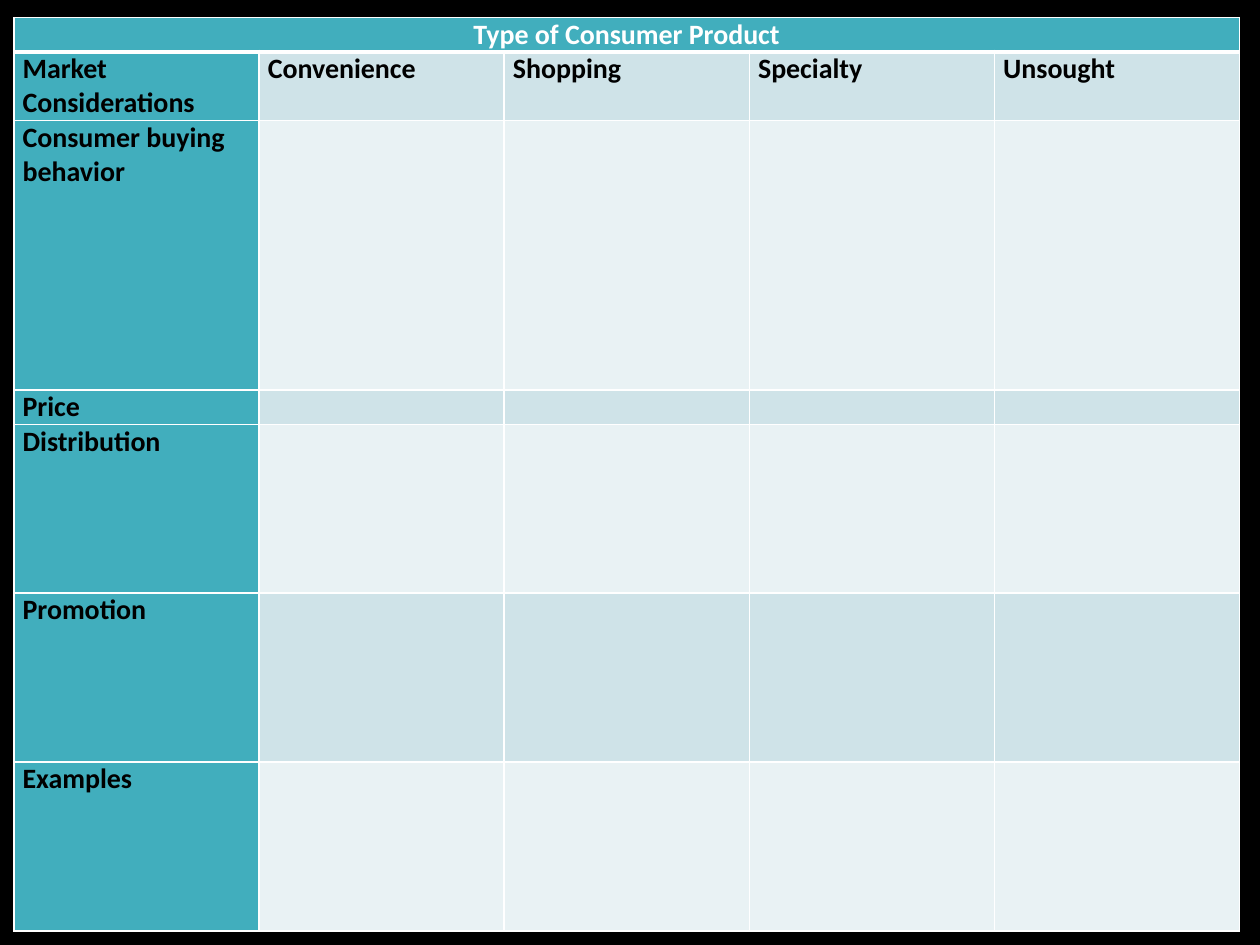
import pptx
import pptx.dml.color
import pptx.enum.text
import pptx.oxml.ns
import pptx.util
from lxml import etree

Inches = pptx.util.Inches
Pt = pptx.util.Pt

TITLE = "Type of Consumer Product"
PRODUCT_TYPES = ["Convenience", "Shopping", "Specialty", "Unsought"]
# Label and height in inches of each row below the title
ROWS = [
    ("Market Considerations", 0.53),
    ("Consumer buying behavior", 2.14),
    ("Price", 0.27),
    ("Distribution", 1.34),
    ("Promotion", 1.34),
    ("Examples", 1.34),
]
TITLE_HEIGHT = 0.27
LEFT, TOP, WIDTH = 0.11, 0.14, 9.73
TEAL, BANDS = "41AEBD", ("CFE3E8", "E9F2F4")
WHITE, BLACK = "FFFFFF", "000000"
MARGINS = {"margin_left": 0.07, "margin_top": 0, "margin_right": 0.07, "margin_bottom": 0}
FONT = {"name": "Calibri", "size": Pt(16), "bold": True}


def color(hex_value):
    return pptx.dml.color.RGBColor.from_string(hex_value)


def paint(fill, hex_value):
    fill.solid()
    fill.fore_color.rgb = color(hex_value)


def add_borders(cell, widths):
    """Put white lines, widths in points by side, ahead of the cell's fill."""
    properties = cell._tc.get_or_add_tcPr()
    for index, side in enumerate("LRTB"):
        line = etree.Element(pptx.oxml.ns.qn(f"a:ln{side}"), w=str(Pt(widths.get(side, 1))))
        fill = etree.SubElement(line, pptx.oxml.ns.qn("a:solidFill"))
        etree.SubElement(fill, pptx.oxml.ns.qn("a:srgbClr"), val=WHITE)
        properties.insert(index, line)


def fill_cell(cell, text, background, text_color, borders):
    for name, value in MARGINS.items():
        setattr(cell, name, Inches(value))
    paint(cell.fill, background)
    add_borders(cell, borders)
    paragraph = cell.text_frame.paragraphs[0]
    if text:
        run = paragraph.add_run()
        run.text = text
        for name, value in FONT.items():
            setattr(run.font, name, value)
        run.font.color.rgb = color(text_color)
    else:
        # Keeps an empty cell from growing past the height of one text line
        etree.SubElement(paragraph._p, pptx.oxml.ns.qn("a:endParaRPr"), sz=str(FONT["size"].centipoints))


def main():
    presentation = pptx.Presentation()
    presentation.slide_width, presentation.slide_height = Inches(10), Inches(7.5)
    slide = presentation.slides.add_slide(presentation.slide_layouts[6])
    paint(slide.background.fill, BLACK)

    heights = [TITLE_HEIGHT] + [height for _, height in ROWS]
    column_count = len(PRODUCT_TYPES) + 1
    table = slide.shapes.add_table(
        len(heights), column_count,
        Inches(LEFT), Inches(TOP), Inches(WIDTH), Inches(sum(heights)),
    ).table
    for row, height in zip(table.rows, heights):
        row.height = Inches(height)

    for column in range(column_count):
        fill_cell(table.cell(0, column), "" if column else TITLE, TEAL, WHITE, {"B": 3})
    table.cell(0, 0).merge(table.cell(0, column_count - 1))
    table.cell(0, 0).text_frame.paragraphs[0].alignment = pptx.enum.text.PP_ALIGN.CENTER

    for index, (label, _) in enumerate(ROWS):
        others = [""] * len(PRODUCT_TYPES) if index else PRODUCT_TYPES
        borders = {} if index else {"T": 3}
        for column, text in enumerate([label, *others]):
            background = BANDS[index % 2] if column else TEAL
            fill_cell(table.cell(index + 1, column), text, background, BLACK, borders)

    presentation.save("out.pptx")


if __name__ == "__main__":
    main()
